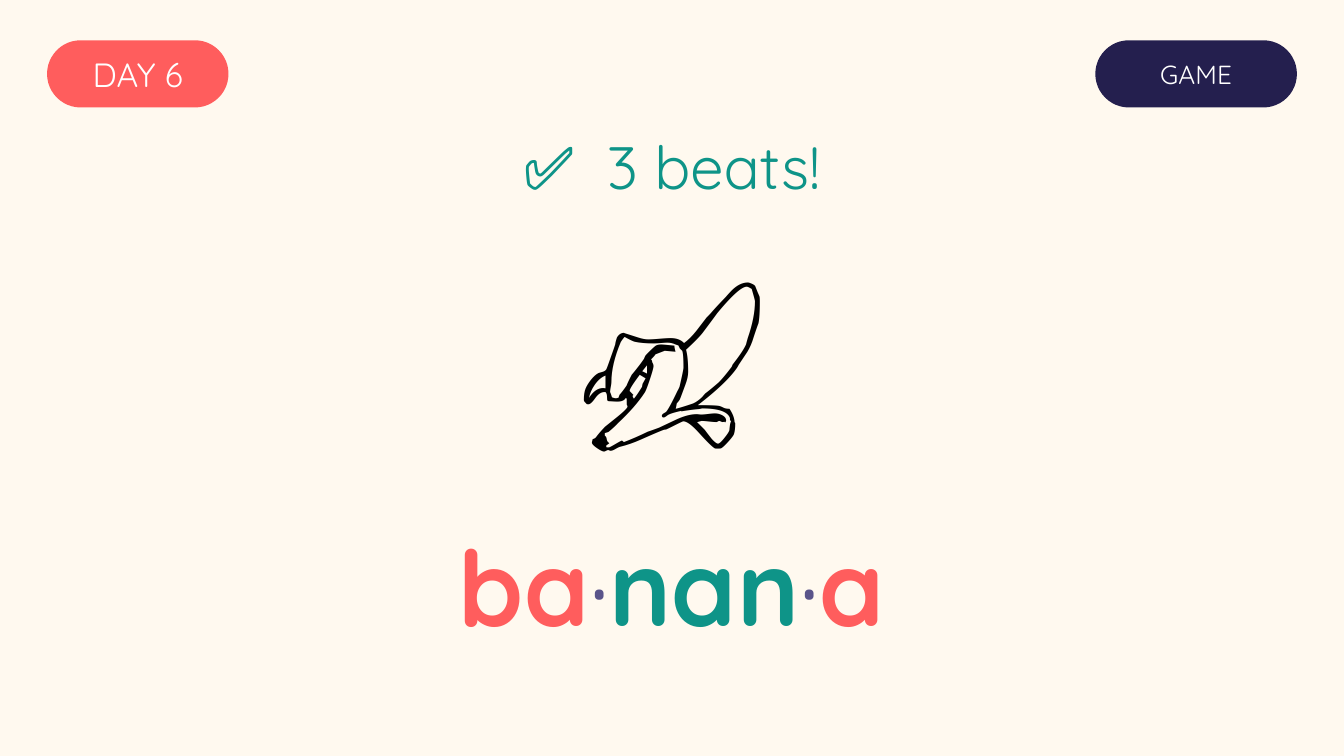
from dataclasses import dataclass

from pptx import Presentation
from pptx import util as u
from pptx.dml.color import RGBColor
from pptx.enum import shapes, text

PX = 914400 // 200  # EMU in one px, at 200 px to the inch
WIDTH, HEIGHT = 2000, 1125
FONT = "Quicksand"
COLOURS = {
    "cream": "FFF9EF",
    "coral": "FF5D5D",
    "navy": "241F4E",
    "teal": "0E9488",
    "violet": "5A548A",
    "white": "FFFFFF",
    "black": "000000",
}


@dataclass(frozen=True)
class Box:
    left: int
    top: int
    width: int
    height: int

    def emu(self) -> list[int]:
        return [v * PX for v in (self.left, self.top, self.width, self.height)]


@dataclass(frozen=True)
class Piece:
    wording: str
    colour: str
    bold: bool = False
    spacing: int = 0  # extra letter spacing, hundredths of a point


@dataclass(frozen=True)
class Badge:
    box: Box
    label: str
    fill: str
    size: int


BADGES = [
    Badge(Box(70, 60, 270, 100), "DAY 6", "coral", 18),
    Badge(Box(1630, 60, 300, 100), "GAME", "navy", 14),
]
HEADING = [
    Piece("✅", "teal"),
    Piece(" ", "teal", spacing=800),
    Piece("3 beats!", "teal"),
]
SYLLABLES = [
    Piece("ba", "coral", bold=True),
    Piece("·", "violet"),
    Piece("nan", "teal", bold=True),
    Piece("·", "violet"),
    Piece("a", "coral", bold=True),
]


def colour(name: str) -> RGBColor:
    return RGBColor.from_string(COLOURS[name])


def write(shape, pieces: list[Piece], size: int, font: str = FONT,
          anchor=text.MSO_ANCHOR.MIDDLE) -> None:
    """Fill a shape with one centred line made of coloured pieces."""
    frame = shape.text_frame
    frame.word_wrap = True
    frame.auto_size = text.MSO_AUTO_SIZE.NONE
    frame.vertical_anchor = anchor
    paragraph = frame.paragraphs[0]
    paragraph.alignment = text.PP_ALIGN.CENTER
    for piece in pieces:
        run = paragraph.add_run()
        run.text = piece.wording
        run.font.name = font
        run.font.size = u.Pt(size)
        run.font.bold = piece.bold
        run.font.color.rgb = colour(piece.colour)
        if piece.spacing:
            run._r.get_or_add_rPr().set("spc", str(piece.spacing))


def add_badge(slide, badge: Badge) -> None:
    shape = slide.shapes.add_shape(
        shapes.MSO_SHAPE.ROUNDED_RECTANGLE, *badge.box.emu())
    shape.adjustments[0] = 0.5
    shape.shadow.inherit = False
    shape.fill.solid()
    shape.fill.fore_color.rgb = colour(badge.fill)
    shape.line.fill.background()
    frame = shape.text_frame
    frame.margin_left = frame.margin_right = 0
    frame.margin_top = frame.margin_bottom = 0
    write(shape, [Piece(badge.label, "white")], badge.size)


def main() -> None:
    presentation = Presentation()
    presentation.slide_width = WIDTH * PX
    presentation.slide_height = HEIGHT * PX
    slide = presentation.slides.add_slide(presentation.slide_layouts[5])
    slide.background.fill.solid()
    slide.background.fill.fore_color.rgb = colour("cream")

    # Corner badges
    for badge in BADGES:
        add_badge(slide, badge)

    # Heading
    title = slide.shapes.title
    title.left, title.top, title.width, title.height = Box(0, 184, WIDTH, 124).emu()
    write(title, HEADING, 32)

    # Banana emoji
    emoji = slide.shapes.add_textbox(*Box(0, 330, WIDTH, 320).emu())
    write(emoji, [Piece("🍌", "black")], 105, "Calibri", text.MSO_ANCHOR.TOP)

    # Word split into beats
    word = slide.shapes.add_textbox(*Box(0, 780, WIDTH, 180).emu())
    write(word, SYLLABLES, 56)

    presentation.save("out.pptx")


if __name__ == "__main__":
    main()
